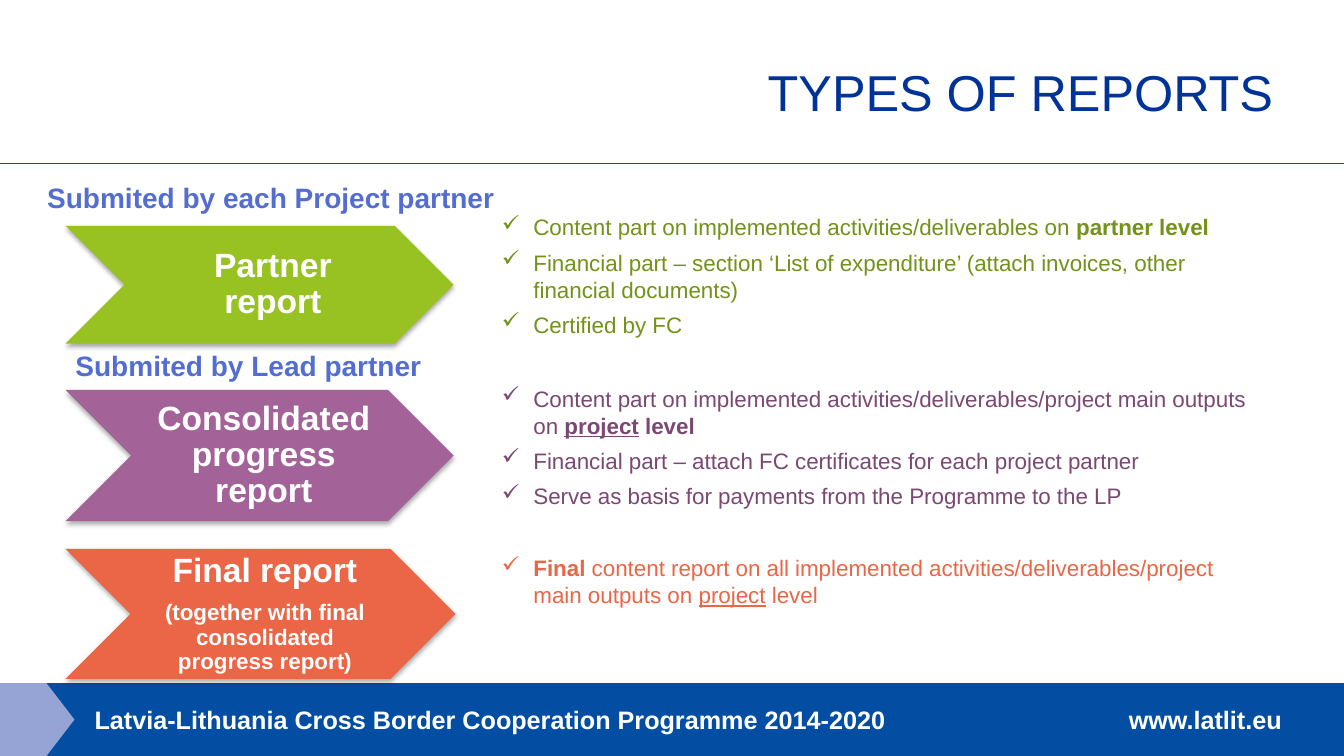
import pptx
import pptx.dml.color
import pptx.enum.shapes
import pptx.enum.text
import pptx.oxml
import pptx.oxml.ns
import pptx.util

Pt = pptx.util.Pt
SHAPE = pptx.enum.shapes.MSO_SHAPE
ALIGN = pptx.enum.text.PP_ALIGN
ANCHOR = pptx.enum.text.MSO_ANCHOR
NS = pptx.oxml.ns.nsdecls("a")
BLUE, WHITE, LABEL = "034EA2", "FFFFFF", "536ED0"
INDENT = 22.5

# Per report: chevron box, text offset, fill, heading lines, list top and height, list colour, items
REPORTS = [
    ((46.8, 161.3, 277.2, 84.2), 61.9, "98C222", [("Partner report", 24)],
     149, 118.8, "729219", [
         [("Content part on implemented activities/deliverables on ", ""), ("partner level", "b")],
         [("Financial part – section ‘List of expenditure’ (attach invoices, "
           "other financial documents)", "")],
         [("Certified by FC", "")]]),
    ((46.8, 278.6, 277.2, 93.6), 55.4, "A36298", [("Consolidated progress report", 24)],
     271.4, 97.2, "7B4873", [
         [("Content part on implemented activities/deliverables/project main outputs on ", ""),
          ("project", "bu"), (" level", "b")],
         [("Financial part – attach FC certificates for each project partner", "")],
         [("Serve as basis for payments from the Programme to the LP", "")]]),
    ((46.8, 392, 278.6, 92.9), 56.2, "EA6647",
     [("Final report", 24), ("(together with final consolidated progress report)", 16)],
     392.4, 46, "EA6647", [
         [("Final ", "b"),
          ("content report on all implemented activities/deliverables/project main outputs on ", ""),
          ("project", "u"), (" level", "")]]),
]


def tint(code):
    return pptx.dml.color.RGBColor.from_string(code)


def apply(item, fmt):
    for key, value in fmt.items():
        setattr(item, key, value)


def write(par, text, size, color, **fmt):
    run = par.add_run()
    run.text = text
    apply(run.font, {"name": "Arial", "size": Pt(size), **fmt})
    run.font.color.rgb = tint(color)


def frame(slide, box, **fmt):
    text = slide.shapes.add_textbox(*map(Pt, box)).text_frame
    apply(text, {"word_wrap": True, **fmt})
    return text


def paint(shape, color):
    shape.shadow.inherit = False
    shape.fill.solid()
    shape.fill.fore_color.rgb = tint(color)
    shape.line.fill.background()


def label(slide, box, text, size=20, color=LABEL, wrap=True):
    write(frame(slide, box, word_wrap=wrap).paragraphs[0], text, size, color, bold=True)


def title(slide, box):
    text = frame(slide, box, vertical_anchor=ANCHOR.MIDDLE, margin_left=0,
                 margin_right=0, margin_top=0, margin_bottom=0)
    par = text.paragraphs[0]
    par.alignment = ALIGN.CENTER
    write(par, "TYPES OF REPORTS", 36, "003399")
    # Rule under the title
    rule = slide.shapes.add_connector(
        pptx.enum.shapes.MSO_CONNECTOR.STRAIGHT, 0, Pt(116.6), Pt(960), Pt(116.6))
    rule.line.width = Pt(0.5)
    rule.line.color.rgb = tint(BLUE)
    rule._element.spPr.append(pptx.oxml.parse_xml(f"<a:effectLst {NS}/>"))


def footer(slide, box):
    left, top, width, height = box
    paint(slide.shapes.add_shape(SHAPE.RECTANGLE, *map(Pt, box)), BLUE)
    # Pointed tab at the left end
    form = slide.shapes.build_freeform(Pt(left), Pt(top), scale=1.0)
    corners = [(33.2, 0), (53.2, height / 2), (33.2, height), (0, height)]
    form.add_line_segments([(Pt(left + x), Pt(top + y)) for x, y in corners])
    paint(form.convert_to_shape(), "95A4D4")
    for x, wide, text in [
            (60.5, 585.4, "Latvia-Lithuania Cross Border Cooperation Programme 2014-2020"),
            (799.2, 125.3, "www.latlit.eu")]:
        label(slide, (left + x, top + 11.7, wide, 28.8), text, 18, WHITE, False)


def arrow(slide, box, shift, fill, lines):
    left, top, _, height = box
    shape = slide.shapes.add_shape(SHAPE.CHEVRON, *map(Pt, box))
    paint(shape, fill)
    effects = shape._element.spPr.find(pptx.oxml.ns.qn("a:effectLst"))
    effects.append(pptx.oxml.parse_xml(
        f'<a:outerShdw {NS} blurRad="{Pt(3.5)}" dist="{Pt(2.2)}" dir="5400000" rotWithShape="0">'
        '<a:srgbClr val="000000"><a:alpha val="32000"/></a:srgbClr></a:outerShdw>'))
    # Heading over the chevron
    text = frame(slide, (left + shift, top, 166.7, height), vertical_anchor=ANCHOR.MIDDLE,
                 margin_left=Pt(8.6), margin_right=Pt(2.9),
                 margin_top=Pt(2.9), margin_bottom=Pt(2.9))
    for i, (words, size) in enumerate(lines):
        par = text.add_paragraph() if i else text.paragraphs[0]
        apply(par, {"alignment": ALIGN.CENTER, "line_spacing": 0.9,
                    "space_after": Pt(size * 0.35)})
        write(par, words, size, WHITE, bold=True)


def checks(slide, box, color, items):
    text = frame(slide, box)
    for i, runs in enumerate(items):
        par = text.add_paragraph() if i else text.paragraphs[0]
        props = par._p.get_or_add_pPr()
        props.set("marL", str(Pt(INDENT)))
        props.set("indent", str(-Pt(INDENT)))
        props.append(pptx.oxml.parse_xml(f'<a:buChar {NS} char="✓"/>'))
        if i:
            par.space_before = Pt(6)
        for words, marks in runs:
            write(par, words, 16, color, bold="b" in marks, underline="u" in marks)


def main():
    deck = pptx.Presentation()
    apply(deck, {"slide_width": Pt(960), "slide_height": Pt(540)})
    slide = deck.slides.add_slide(deck.slide_layouts[6])
    footer(slide, (0, 488, 960, 52))
    title(slide, (452.2, 28.1, 553.7, 74.2))
    for box, shift, fill, lines, top, height, color, items in REPORTS:
        arrow(slide, box, shift, fill, lines)
        checks(slide, (351.4, top, 560.9, height), color, items)
    label(slide, (26.6, 125.3, 346.3, 31.5), "Submited by each Project partner")
    label(slide, (46.8, 245.5, 265, 31.5), "Submited by Lead partner")
    deck.save("out.pptx")


if __name__ == "__main__":
    main()
